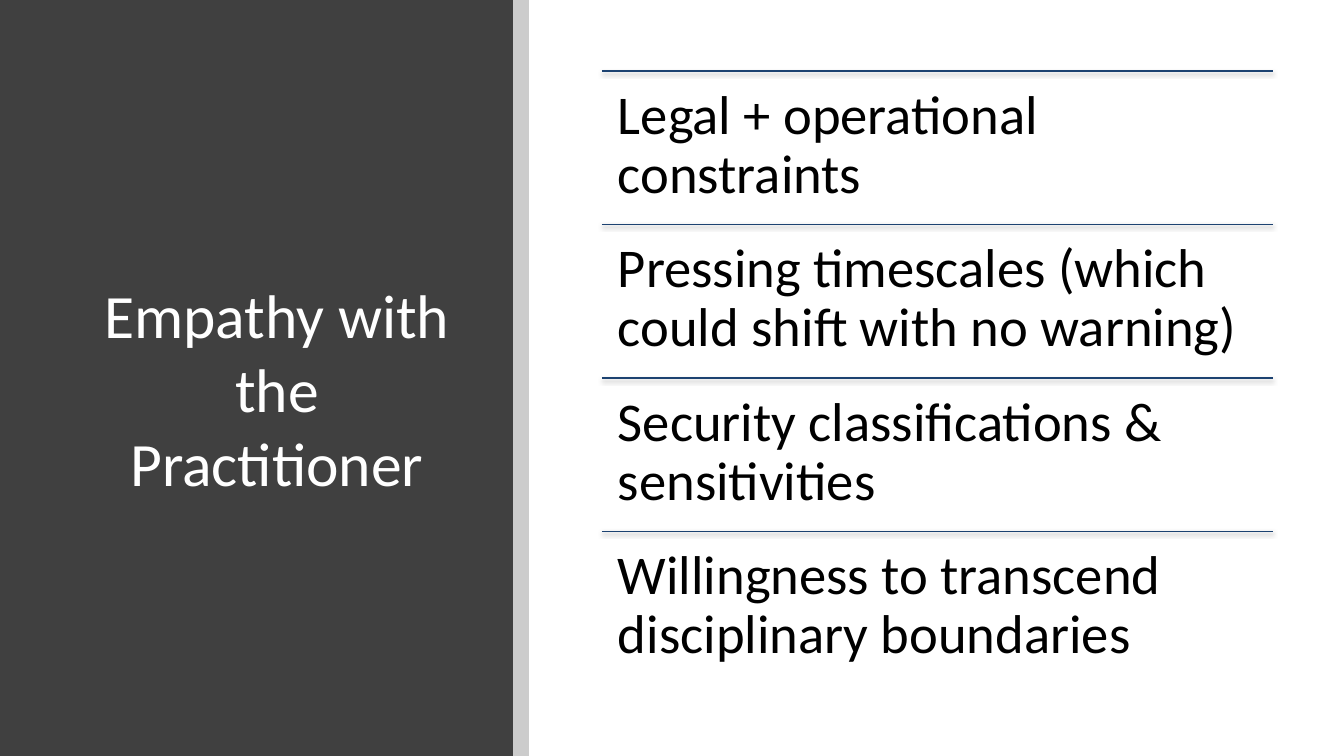
import pptx
import pptx.util
import pptx.dml.color
import pptx.enum.shapes
import pptx.enum.text
from lxml import etree
from pptx.oxml.ns import qn

TITLE = "Empathy with the Practitioner"
NEEDS = [
    "Legal + operational constraints",
    "Pressing timescales (which could shift with no warning)",
    "Security classifications & sensitivities",
    "Willingness to transcend disciplinary boundaries",
]
COLORS = {"panel": "404040", "strip": "000000", "rule": "1C4271",
          "title": "FFFFFF", "need": "000000", "shadow": "000000"}
FONT = "Calibri"

# Lengths in px
SLIDE_W, SLIDE_H = 1344, 756
PANEL_W, STRIP_W = 513, 16
TITLE_BOX = (93, 90, 368, 596)
LIST_LEFT, LIST_TOP, LIST_W, LIST_H = 602, 71, 671, 614
TITLE_INSET, NEED_INSET = 9, 16

EMU_PER_PX = 914400 / 100.8


def px(length):
    return pptx.util.Emu(round(length * EMU_PER_PX))


def rgb(role):
    return pptx.dml.color.RGBColor.from_string(COLORS[role])


def add_color_alpha(color, percent):
    """Make an a:srgbClr element partly transparent."""
    etree.SubElement(color, qn("a:alpha"), val=str(percent * 1000))


def add_bar(shapes, left, width, role):
    bar = shapes.add_shape(pptx.enum.shapes.MSO_SHAPE.RECTANGLE,
                           px(left), 0, px(width), px(SLIDE_H))
    bar.shadow.inherit = False
    bar.fill.solid()
    bar.fill.fore_color.rgb = rgb(role)
    bar.line.fill.background()
    return bar


def add_text(shapes, box, text, size, role, inset, anchor, align, spacing):
    frame = shapes.add_textbox(*map(px, box)).text_frame
    frame.word_wrap = True
    frame.vertical_anchor = anchor
    frame.margin_left = frame.margin_right = px(inset)
    frame.margin_top = frame.margin_bottom = px(inset)
    paragraph = frame.paragraphs[0]
    paragraph.alignment = align
    paragraph.line_spacing = spacing
    run = paragraph.add_run()
    run.text = text
    run.font.name = FONT
    run.font.size = pptx.util.Pt(size)
    run.font.color.rgb = rgb(role)


def add_rule(shapes, top):
    """Draw a thin line across the list with a soft shadow below it."""
    rule = shapes.add_connector(pptx.enum.shapes.MSO_CONNECTOR.STRAIGHT,
                                px(LIST_LEFT), px(top),
                                px(LIST_LEFT + LIST_W), px(top))
    rule.line.color.rgb = rgb("rule")
    rule.line.width = pptx.util.Pt(0.75)
    effects = etree.SubElement(rule._element.spPr, qn("a:effectLst"))
    shadow = etree.SubElement(effects, qn("a:outerShdw"),
                              blurRad=str(pptx.util.Pt(3.1)),
                              dist=str(pptx.util.Pt(1.6)),
                              dir="5400000", rotWithShape="0")
    color = etree.SubElement(shadow, qn("a:srgbClr"), val=COLORS["shadow"])
    add_color_alpha(color, 38)


def main():
    deck = pptx.Presentation()
    deck.slide_width, deck.slide_height = px(SLIDE_W), px(SLIDE_H)
    shapes = deck.slides.add_slide(deck.slide_layouts[6]).shapes
    anchors = pptx.enum.text.MSO_ANCHOR
    aligns = pptx.enum.text.PP_ALIGN

    add_bar(shapes, 0, PANEL_W, "panel")
    strip = add_bar(shapes, PANEL_W, STRIP_W, "strip")
    add_color_alpha(strip._element.spPr.find(".//" + qn("a:srgbClr")), 20)
    add_text(shapes, TITLE_BOX, TITLE, 44, "title", TITLE_INSET,
             anchors.MIDDLE, aligns.CENTER, 1.0)

    need_list = shapes.add_group_shape().shapes
    row_h = LIST_H / len(NEEDS)
    for row, need in enumerate(NEEDS):
        top = LIST_TOP + row * row_h
        add_rule(need_list, top)
        add_text(need_list, (LIST_LEFT, top, LIST_W, row_h), need, 39, "need",
                 NEED_INSET, anchors.TOP, aligns.LEFT, 0.9)

    deck.save("out.pptx")


if __name__ == "__main__":
    main()
